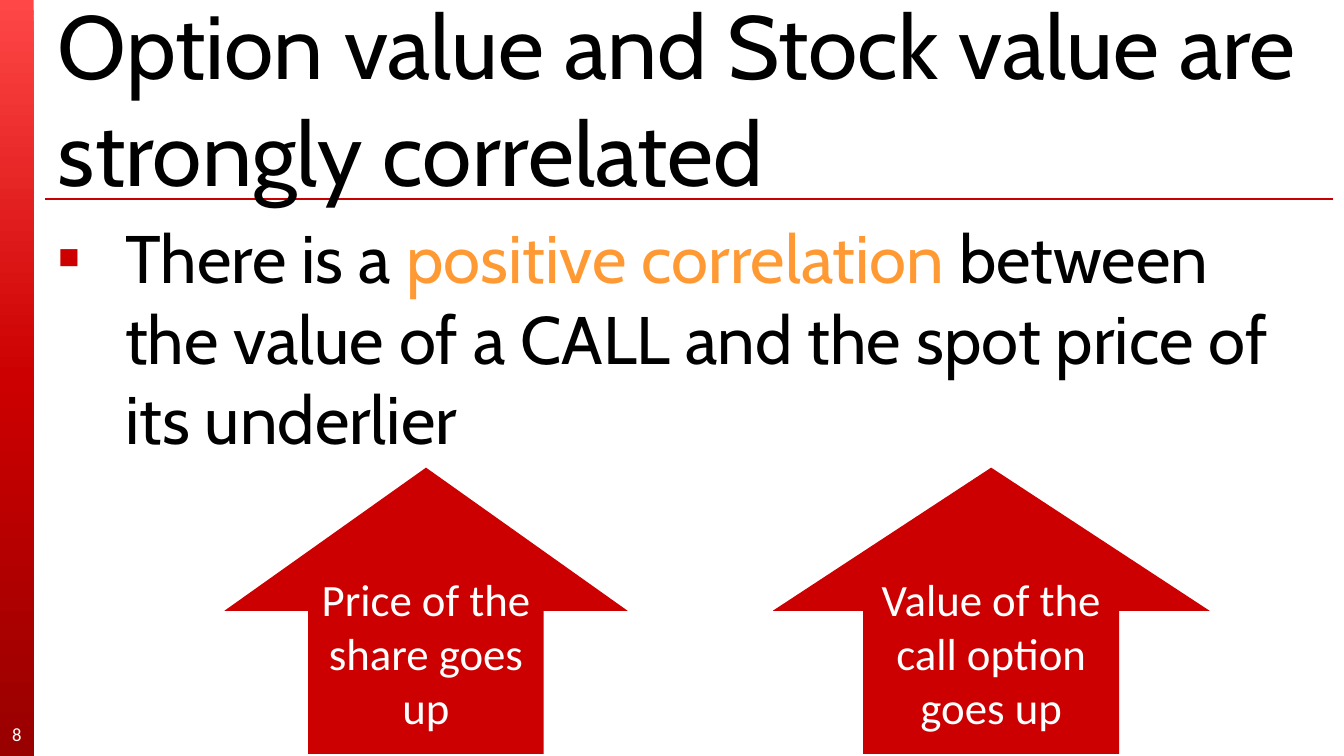
from copy import deepcopy

from lxml import etree
from pptx import Presentation, util as u
from pptx.dml.color import RGBColor
from pptx.enum import shapes, text
from pptx.oxml.ns import qn

W = 10
H = W * 9 / 16
COLORS = {"red": "CC0000", "light_red": "FF4747", "dark_red": "990000", "rule": "C80000",
          "orange": "FF9933", "black": "000000", "white": "FFFFFF"}

TITLE = "Option value and Stock value are strongly correlated"
STATEMENT = [("There is a ", "black"),
             ("positive correlation ", "orange"),
             ("between the value of a CALL and the spot price of its underlier", "black")]
PAGE = "8"
ARROWS = [("Price of the share goes up", 1.67, 3, 0.584),
          ("Value of the call option goes up", 5.75, 3.25, 0.586)]  # left, width, shaft share
BAND_STOPS = [(0, "light_red"), (0.5, "red"), (1, "dark_red")]

BAND_W = 0.25
LEFT, RIGHT = W / 30, 9.92
TITLE_TOP, TITLE_H = 0.06, 1.33
RULE_Y, BODY_TOP = 1.48, 1.56
ARROW_TOP, ARROW_H = 3.48, 2.13
PAGE_H = 0.3
INDENT = 0.5

TITLE_FONT = {"name": "Cabin", "size": u.Pt(48)}
BODY_FONT = {"name": "Cabin", "size": u.Pt(36)}
PAGE_FONT = {"name": "Calibri", "size": u.Pt(10)}
ARROW_FONT = {"name": "Calibri", "size": u.Pt(24)}
MIDDLE = text.MSO_ANCHOR.MIDDLE
CENTER = text.PP_ALIGN.CENTER


def rgb(color):
    return RGBColor.from_string(COLORS[color])


def box(left, top, width, height):
    return [u.Inches(v) for v in (left, top, width, height)]


def write(shape, runs, font, align=text.PP_ALIGN.LEFT, anchor=text.MSO_ANCHOR.TOP):
    """Fill a shape with one paragraph of (words, colour) runs."""
    frame = shape.text_frame
    frame.word_wrap = True
    frame.vertical_anchor = anchor
    paragraph = frame.paragraphs[0]
    paragraph.alignment = align
    for words, color in runs:
        run = paragraph.add_run()
        run.text = words
        for key, value in font.items():
            setattr(run.font, key, value)
        run.font.color.rgb = rgb(color)
    return paragraph


def add_plain_shape(slide, kind, place):
    shape = slide.shapes.add_shape(kind, *place)
    shape.shadow.inherit = False
    shape.line.fill.background()
    return shape


def add_band(slide):
    band = add_plain_shape(slide, shapes.MSO_SHAPE.RECTANGLE, box(0, 0, BAND_W, H))
    band.fill.gradient()
    band.fill.gradient_angle = 270
    stop_list = band.fill._fill._gradFill.find(qn("a:gsLst"))
    stop_list.insert(1, deepcopy(stop_list[0]))
    for stop, (position, color) in zip(band.fill.gradient_stops, BAND_STOPS):
        stop.position = position
        stop.color.rgb = rgb(color)


def add_rule(slide):
    ends = [u.Inches(v) for v in (LEFT, RULE_Y, RIGHT, RULE_Y)]
    rule = slide.shapes.add_connector(shapes.MSO_CONNECTOR.STRAIGHT, *ends)
    rule.line.color.rgb = rgb("rule")
    rule.line.width = u.Pt(0.75)
    etree.SubElement(rule._element.spPr, qn("a:effectLst"))


def add_bullet(paragraph, char, color, font):
    props = paragraph._p.get_or_add_pPr()
    props.set("marL", str(u.Inches(INDENT)))
    props.set("indent", str(-u.Inches(INDENT)))
    bullet_color = etree.SubElement(props, qn("a:buClr"))
    etree.SubElement(bullet_color, qn("a:srgbClr"), val=COLORS[color])
    etree.SubElement(props, qn("a:buFont"), typeface=font)
    etree.SubElement(props, qn("a:buChar"), char=char)


def main():
    deck = Presentation()
    deck.slide_width, deck.slide_height = u.Inches(W), u.Inches(H)
    slide = deck.slides.add_slide(deck.slide_layouts[6])

    add_band(slide)
    add_rule(slide)

    title = slide.shapes.add_textbox(*box(LEFT, TITLE_TOP, RIGHT - LEFT, TITLE_H))
    write(title, [(TITLE, "black")], TITLE_FONT, anchor=MIDDLE)

    body = slide.shapes.add_textbox(*box(LEFT, BODY_TOP, 0.95 * W, H - BODY_TOP))
    add_bullet(write(body, STATEMENT, BODY_FONT), "▪", "red", "Calibri")

    page = slide.shapes.add_textbox(*box(0, 5.31, BAND_W, PAGE_H))
    for side in ("left", "top", "right", "bottom"):
        setattr(page.text_frame, f"margin_{side}", 0)
    write(page, [(PAGE, "white")], PAGE_FONT, CENTER, MIDDLE)

    for words, left, width, shaft in ARROWS:
        arrow = add_plain_shape(slide, shapes.MSO_SHAPE.UP_ARROW,
                                box(left, ARROW_TOP, width, ARROW_H))
        arrow.adjustments[0] = shaft
        arrow.adjustments[1] = 0.5
        arrow.fill.solid()
        arrow.fill.fore_color.rgb = rgb("red")
        write(arrow, [(words, "white")], ARROW_FONT, CENTER, MIDDLE)

    deck.save("out.pptx")


if __name__ == "__main__":
    main()
